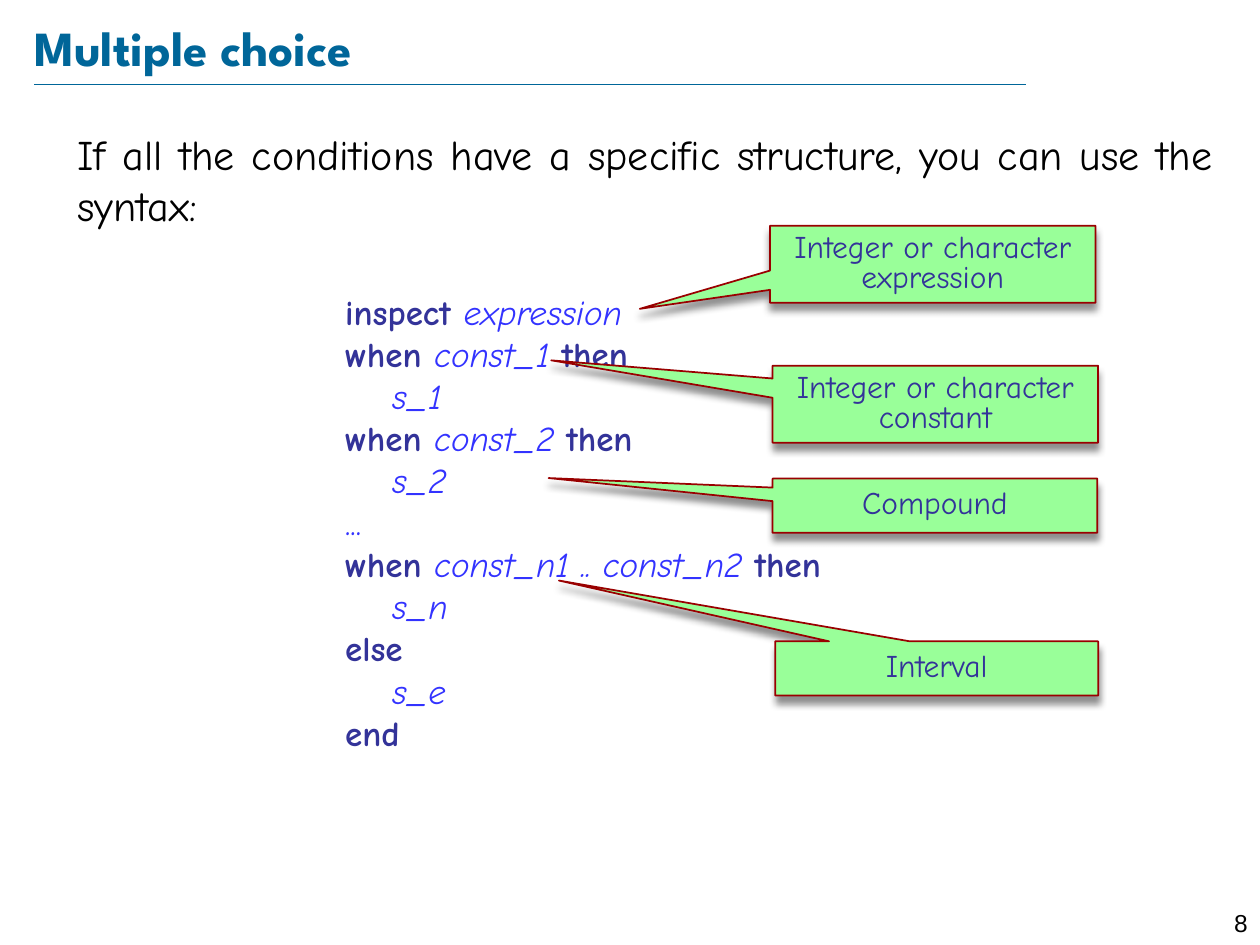
from lxml import etree
from pptx import Presentation
from pptx.dml.color import RGBColor
from pptx.enum import shapes, text
from pptx.oxml import ns
from pptx.util import Pt

COLORS = {
    "title": "006699", "text": "000000", "keyword": "333399", "variable": "3333FF",
    "callout": "99FF99", "callout_line": "990000", "shadow": "000000",
}
BODY_FONT = "Comic Neue"
CODE_INDENT, NESTED_INDENT = 153, 180

# Each line: indent, then (wording, style) pieces.
CODE = [
    (CODE_INDENT, [("inspect ", "keyword"), ("expression", "variable")]),
    (CODE_INDENT, [("when ", "keyword"), ("const_1 ", "variable"), ("then", "keyword")]),
    (NESTED_INDENT, [("s_1", "variable")]),
    (CODE_INDENT, [("when ", "keyword"), ("const_2 ", "variable"), ("then", "keyword")]),
    (NESTED_INDENT, [("s_2", "variable")]),
    (CODE_INDENT, [("...", "plain")]),
    (CODE_INDENT, [("when ", "keyword"), ("const_n1 .. const_n2 ", "variable"),
                   ("then", "keyword")]),
    (NESTED_INDENT, [("s_n", "variable")]),
    (CODE_INDENT, [("else", "keyword")]),
    (NESTED_INDENT, [("s_e", "variable")]),
    (CODE_INDENT, [("end", "keyword")]),
]

# Wording, (left, top, width, height), pointer offset as shares of width and height.
CALLOUTS = [
    ("Integer or character expression", (440, 129, 186, 44), (-0.9, 0.58)),
    ("Integer or character constant", (441.5, 209, 186, 44), (-1.18, -0.57)),
    ("Compound", (441.5, 273.5, 185.5, 31), (-1.19, -0.51)),
    ("Interval", (443, 366.5, 184.5, 31), (-1.17, -1.62)),
]


def rgb(name):
    return RGBColor.from_string(COLORS[name])


def place(shape, left, top, width, height):
    shape.left, shape.top = Pt(left), Pt(top)
    shape.width, shape.height = Pt(width), Pt(height)


def style_font(font, name, size, color, bold=False, italic=False):
    font.name, font.size = name, Pt(size)
    font.bold, font.italic = bold, italic
    font.color.rgb = rgb(color)


def add_run(paragraph, wording, *style, **emphasis):
    run = paragraph.add_run()
    run.text = wording
    style_font(run.font, *style, **emphasis)


def set_margins(frame, horizontal, vertical):
    frame.margin_left = frame.margin_right = Pt(horizontal)
    frame.margin_top = frame.margin_bottom = Pt(vertical)


def format_body_line(paragraph, indent, space_before):
    """Replace the template's bullet and hanging indent."""
    paragraph.space_before = Pt(space_before)
    properties = paragraph._p.get_or_add_pPr()
    properties.set("marL", str(Pt(indent)))
    properties.set("indent", "0")
    etree.SubElement(properties, ns.qn("a:buNone"))


def add_title(slide):
    title = slide.shapes.title
    place(title, 19.5, 9.5, 625, 34.5)
    frame = title.text_frame
    set_margins(frame, 0, 0)
    frame.auto_size = text.MSO_AUTO_SIZE.NONE
    frame.vertical_anchor = text.MSO_ANCHOR.MIDDLE
    heading = frame.paragraphs[0]
    heading.alignment = text.PP_ALIGN.LEFT
    add_run(heading, "Multiple choice", "League Spartan", 28, "title", bold=True)


def add_title_rule(slide):
    rule = slide.shapes.add_connector(
        shapes.MSO_CONNECTOR.STRAIGHT, Pt(19.5), Pt(48), Pt(586.5), Pt(48))
    rule.line.color.rgb = rgb("title")
    rule.line.width = Pt(0.25)
    etree.SubElement(rule._element.spPr, ns.qn("a:effectLst"))


def add_body(slide):
    body = slide.placeholders[1]
    place(body, 37, 70, 663, 413)
    frame = body.text_frame
    frame.auto_size = text.MSO_AUTO_SIZE.NONE
    intro = frame.paragraphs[0]
    intro.alignment = text.PP_ALIGN.JUSTIFY
    format_body_line(intro, 0, 0)
    add_run(intro, "If all the conditions have a specific structure, you can use the syntax:",
            BODY_FONT, 24, "text")
    for number, (indent, pieces) in enumerate(CODE):
        line = frame.add_paragraph()
        format_body_line(line, indent, 0 if number else 35)
        for wording, style in pieces:
            color = "keyword" if style == "keyword" else "variable"
            add_run(line, wording, BODY_FONT, 20, color,
                    bold=style == "keyword", italic=style == "variable")


def add_shadow(shape):
    shape.shadow.inherit = False
    effects = shape._element.spPr.find(ns.qn("a:effectLst"))
    shadow = etree.SubElement(effects, ns.qn("a:outerShdw"), blurRad=str(Pt(4)),
                              dist=str(Pt(4)), dir="5400000", rotWithShape="0")
    color = etree.SubElement(shadow, ns.qn("a:srgbClr"), val=COLORS["shadow"])
    etree.SubElement(color, ns.qn("a:alpha"), val="43000")


def add_callout(slide, wording, box, pointer):
    callout = slide.shapes.add_shape(
        shapes.MSO_SHAPE.RECTANGULAR_CALLOUT, *map(Pt, box))
    callout.adjustments[0], callout.adjustments[1] = pointer
    callout.fill.solid()
    callout.fill.fore_color.rgb = rgb("callout")
    callout.line.color.rgb = rgb("callout_line")
    callout.line.width = Pt(1)
    add_shadow(callout)
    frame = callout.text_frame
    frame.word_wrap = True
    frame.vertical_anchor = text.MSO_ANCHOR.MIDDLE
    set_margins(frame, 0, 3.6)
    label = frame.paragraphs[0]
    label.alignment = text.PP_ALIGN.CENTER
    label.line_spacing = 0.8
    add_run(label, wording, BODY_FONT, 18, "keyword")


def add_slide_number(slide):
    number = slide.shapes.add_textbox(Pt(680), Pt(515.5), Pt(40), Pt(17.5))
    number.text_frame.word_wrap = True
    paragraph = number.text_frame.paragraphs[0]
    paragraph.alignment = text.PP_ALIGN.RIGHT
    add_run(paragraph, "8", "Arial", 14, "text")


def main():
    deck = Presentation()
    deck.slide_width, deck.slide_height = Pt(720), Pt(540)
    slide = deck.slides.add_slide(deck.slide_layouts[1])
    add_title_rule(slide)
    add_slide_number(slide)
    add_title(slide)
    add_body(slide)
    for callout in CALLOUTS:
        add_callout(slide, *callout)
    deck.save("out.pptx")


if __name__ == "__main__":
    main()
